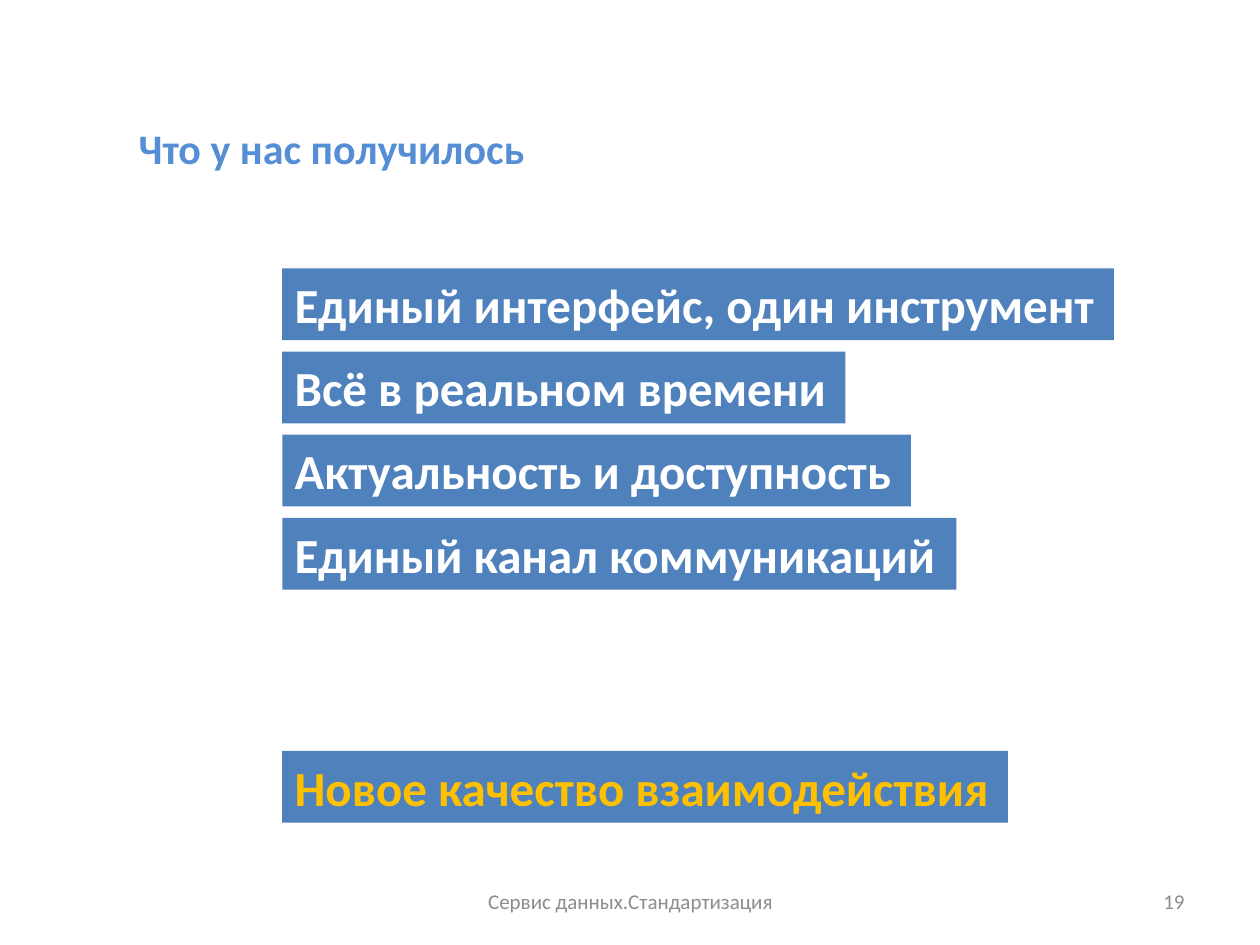
"""Builds the summary slide with its stack of benefit banners."""
from dataclasses import dataclass

from pptx import Presentation
from pptx import util as u
from pptx.dml import color
from pptx.enum import shapes, text


@dataclass(frozen=True)
class Theme:
    """Font, colours and type sizes of the slide."""
    font: str = "Calibri"
    title: str = "558ED5"
    banner: str = "4F81BD"
    light: str = "FFFFFF"
    accent: str = "FFC000"
    muted: str = "8C8C8C"
    title_size: int = 24
    banner_size: int = 28
    footer_size: int = 12


THEME = Theme()
BANNER_LEFT = 2.24
BANNER_HEIGHT = 0.57
BANNER_TOP = 2.13
BANNER_STEP = 0.66
BENEFITS = [
    ("Единый интерфейс, один инструмент", 6.6),
    ("Всё в реальном времени", 4.47),
    ("Актуальность и доступность", 4.99),
    ("Единый канал коммуникаций", 5.35),
]


def write(shape, content, *, size, ink, bold=False,
          align=text.PP_ALIGN.LEFT, anchor=text.MSO_ANCHOR.TOP):
    """Put one formatted paragraph into a shape."""
    frame = shape.text_frame
    frame.word_wrap = True
    frame.auto_size = text.MSO_AUTO_SIZE.NONE
    frame.vertical_anchor = anchor
    paragraph = frame.paragraphs[0]
    paragraph.alignment = align
    run = paragraph.add_run()
    run.text = content
    run.font.name = THEME.font
    run.font.size = u.Pt(size)
    run.font.bold = bold
    run.font.color.rgb = color.RGBColor.from_string(ink)


def set_title(slide, content):
    """Place and fill the title placeholder."""
    title = slide.shapes.title
    title.left, title.top = u.Inches(1), u.Inches(0.92)
    title.width, title.height = u.Inches(8.25), u.Inches(0.5)
    write(title, content, size=THEME.title_size, ink=THEME.title, bold=True)


def add_banner(slide, content, top, width, ink=THEME.light):
    """Add a filled banner with bold text."""
    banner = slide.shapes.add_shape(
        shapes.MSO_SHAPE.RECTANGLE, u.Inches(BANNER_LEFT), u.Inches(top),
        u.Inches(width), u.Inches(BANNER_HEIGHT))
    banner.shadow.inherit = False
    banner.fill.solid()
    banner.fill.fore_color.rgb = color.RGBColor.from_string(THEME.banner)
    banner.line.fill.background()
    banner.text_frame.margin_right = 0
    write(banner, content, size=THEME.banner_size, ink=ink, bold=True)


def add_footer(slide, content, left, width, align):
    """Add a small muted text on the footer line."""
    box = slide.shapes.add_textbox(
        u.Inches(left), u.Inches(6.95), u.Inches(width), u.Inches(0.4))
    write(box, content, size=THEME.footer_size, ink=THEME.muted,
          align=align, anchor=text.MSO_ANCHOR.MIDDLE)


def main():
    """Build and save the slide."""
    presentation = Presentation()
    presentation.slide_width = u.Inches(10)
    presentation.slide_height = u.Inches(7.5)
    slide = presentation.slides.add_slide(presentation.slide_layouts[5])
    set_title(slide, "Что у нас получилось")
    for index, (content, width) in enumerate(BENEFITS):
        add_banner(slide, content, BANNER_TOP + index * BANNER_STEP, width)
    add_banner(slide, "Новое качество взаимодействия", 5.96, 5.76, THEME.accent)
    add_footer(slide, "Сервис данных.Стандартизация", 3.42, 3.17,
               text.PP_ALIGN.CENTER)
    add_footer(slide, "19", 7.17, 2.33, text.PP_ALIGN.RIGHT)
    presentation.save("out.pptx")


if __name__ == "__main__":
    main()
